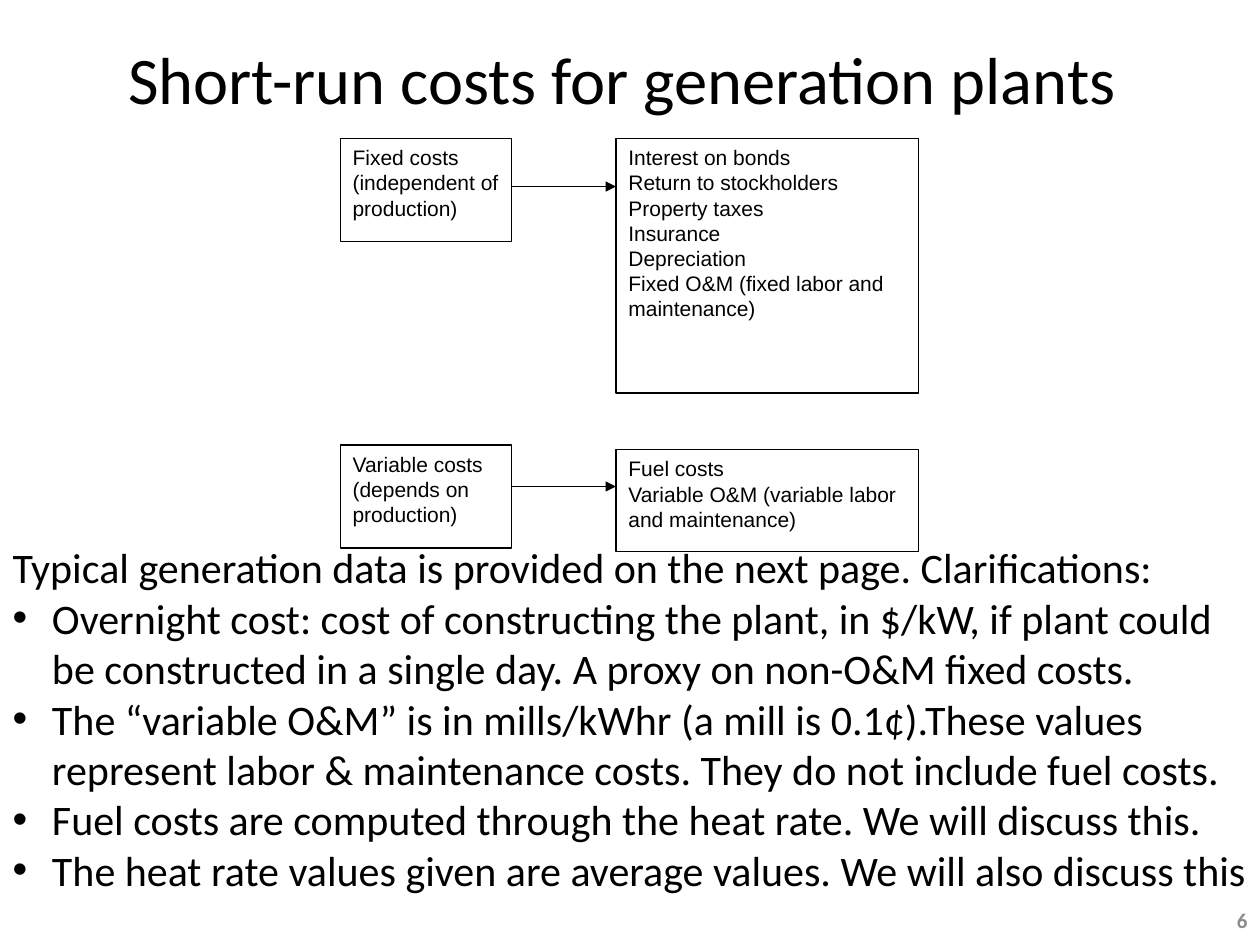
from dataclasses import dataclass

from lxml.etree import SubElement
from pptx import Presentation
from pptx.dml.color import RGBColor
from pptx.enum.shapes import MSO_CONNECTOR as CONN, MSO_SHAPE as SHAPE
from pptx.enum.text import MSO_ANCHOR as ANCHOR, MSO_AUTO_SIZE as FIT, PP_ALIGN as ALIGN
from pptx.oxml.ns import qn
from pptx.util import Pt


@dataclass(frozen=True)
class Theme:
    ink: RGBColor = RGBColor(0, 0, 0)
    paper: RGBColor = RGBColor(255, 255, 255)
    muted: RGBColor = RGBColor(0x8C, 0x8C, 0x8C)
    text_font: str = "Calibri"
    box_font: str = "Arial"
    title: float = 38
    body: float = 24
    small: float = 12
    line: float = 0.75


THEME = Theme()
SLIDE_W, SLIDE_H = 720, 540
CAUSE_X, CAUSE_W = 194.4, 98
DETAIL_X, DETAIL_W = 352, 173
BULLET_INDENT = 22.5

COST_ROWS = [
    dict(cause="Fixed costs (independent of production)", cause_y=79.2,
         details=["Interest on bonds", "Return to stockholders", "Property taxes",
                  "Insurance", "Depreciation",
                  "Fixed O&M (fixed labor and maintenance)"],
         details_y=79.2, details_h=145.4, arrow_y=106.6),
    dict(cause="Variable costs (depends on production)", cause_y=254.2,
         details=["Fuel costs", "Variable O&M (variable labor and maintenance)"],
         details_y=257, details_h=58.3, arrow_y=278),
]
CAUSE_H = 59

INTRO = "Typical generation data is provided on the next page. Clarifications:"
CLARIFICATIONS = [
    "Overnight cost: cost of constructing the plant, in $/kW, if plant could be "
    "constructed in a single day. A proxy on non-O&M fixed costs.",
    "The “variable O&M” is in mills/kWhr (a mill is 0.1¢).These values represent "
    "labor & maintenance costs. They do not include fuel costs.",
    "Fuel costs are computed through the heat rate. We will discuss this.",
    "The heat rate values given are average values. We will also discuss this",
]


def place(sp, x, y, w, h):
    sp.left, sp.top, sp.width, sp.height = Pt(x), Pt(y), Pt(w), Pt(h)


def write(sp, lines, size, font=THEME.text_font, color=THEME.ink, bold=False,
          align=ALIGN.LEFT, anchor=ANCHOR.TOP):
    tf = sp.text_frame
    tf.word_wrap = True
    tf.auto_size = FIT.NONE
    tf.vertical_anchor = anchor
    for i, line in enumerate(lines):
        p = tf.paragraphs[0] if i == 0 else tf.add_paragraph()
        p.alignment = align
        p.space_before = Pt(0)
        r = p.add_run()
        r.text = line
        r.font.size, r.font.name, r.font.bold = Pt(size), font, bold
        r.font.color.rgb = color
    return tf.paragraphs


def set_bullet(p, char=None):
    pPr = p._p.get_or_add_pPr()
    indent = Pt(BULLET_INDENT) if char else 0
    pPr.set("marL", str(indent))
    pPr.set("indent", str(-indent))
    if char:
        SubElement(pPr, qn("a:buFont"), typeface="Arial")
        SubElement(pPr, qn("a:buChar"), char=char)
    else:
        SubElement(pPr, qn("a:buNone"))


def add_box(shapes, lines, x, y, w, h):
    sp = shapes.add_shape(SHAPE.RECTANGLE, Pt(x), Pt(y), Pt(w), Pt(h))
    sp.shadow.inherit = False
    sp.fill.solid()
    sp.fill.fore_color.rgb = THEME.paper
    sp.line.color.rgb = THEME.ink
    sp.line.width = Pt(THEME.line)
    write(sp, lines, THEME.small, font=THEME.box_font)


def add_arrow(shapes, x1, x2, y):
    cxn = shapes.add_connector(CONN.STRAIGHT, Pt(x1), Pt(y), Pt(x2), Pt(y))
    cxn.line.color.rgb = THEME.ink
    cxn.line.width = Pt(THEME.line)
    SubElement(cxn.line._get_or_add_ln(), qn("a:tailEnd"), type="triangle")
    SubElement(cxn._element.spPr, qn("a:effectLst"))


def add_cost_diagram(slide):
    shapes = slide.shapes.add_group_shape().shapes
    for row in COST_ROWS:
        add_box(shapes, [row["cause"]], CAUSE_X, row["cause_y"], CAUSE_W, CAUSE_H)
        add_box(shapes, row["details"], DETAIL_X, row["details_y"],
                DETAIL_W, row["details_h"])
        add_arrow(shapes, CAUSE_X + CAUSE_W, DETAIL_X, row["arrow_y"])


def add_title(slide):
    title = slide.shapes.title
    place(title, 0, 18, SLIDE_W, 53.6)
    write(title, ["Short-run costs for generation plants "], THEME.title,
          align=ALIGN.CENTER)


def add_clarifications(slide):
    body = slide.placeholders[1]
    place(body, 0, 306, SLIDE_W, 211)
    intro, *points = write(body, [INTRO, *CLARIFICATIONS], THEME.body)
    set_bullet(intro)
    for p in points:
        set_bullet(p, "•")
    slide.shapes._spTree.append(body._element)


def add_page_number(slide):
    sp = slide.shapes.add_textbox(Pt(684), Pt(511), Pt(36), Pt(29))
    write(sp, ["6"], THEME.small, color=THEME.muted, bold=True,
          align=ALIGN.RIGHT, anchor=ANCHOR.MIDDLE)


def main():
    prs = Presentation()
    prs.slide_width, prs.slide_height = Pt(SLIDE_W), Pt(SLIDE_H)
    slide = prs.slides.add_slide(prs.slide_layouts[1])
    add_title(slide)
    add_cost_diagram(slide)
    add_clarifications(slide)
    add_page_number(slide)
    prs.save("out.pptx")


if __name__ == "__main__":
    main()
